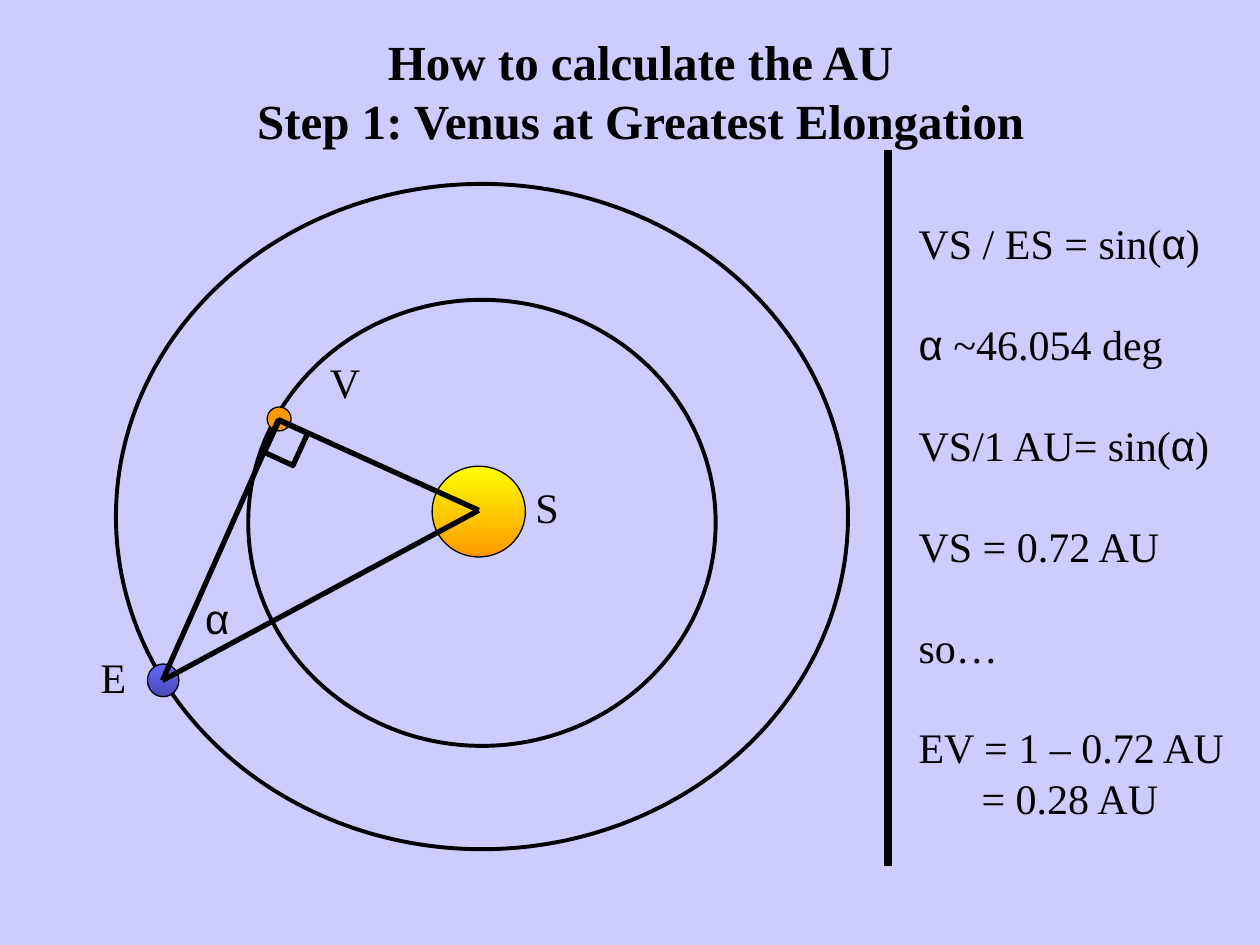
from dataclasses import dataclass
from itertools import groupby

from pptx import Presentation
from pptx import util as u
from pptx.dml.color import RGBColor
from pptx.enum import shapes, text
from pptx.oxml import ns, xmlchemy

BLACK = "000000"
SERIF, SANS = "Times New Roman", "Arial"
LINE_PITCH = 1.2
BODY_SIZE = 24


@dataclass
class Disc:
    left: float
    top: float
    width: float
    height: float
    colors: tuple[str, ...] = ()
    outline: float = 0.75


@dataclass
class Label:
    words: str
    left: float
    top: float
    width: float = 0.42


@dataclass
class Segment:
    start: tuple[float, float]
    end: tuple[float, float]
    weight: float = 3


@dataclass
class Equation:
    words: str
    gap: float = BODY_SIZE * LINE_PITCH
    indent: float = 0


ORBITS = [
    Disc(0.92, 1.46, 5.81, 5.28, outline=2.25),
    Disc(1.97, 2.38, 3.71, 3.54, outline=2.25),
]
BODIES = [
    Disc(1.17, 5.27, 0.25, 0.26, ("6666FF", "4949B6")),
    Disc(3.43, 3.7, 0.74, 0.72, ("FFFF00", "FF9900")),
    Disc(2.12, 3.23, 0.19, 0.19, ("FF9900",)),
]
LABELS = [
    Label("S", 4.15, 3.77),
    Label("V", 2.52, 2.78),
    Label("E", 0.7, 5.12),
    Label("α", 1.53, 4.65),
]
SUN, VENUS, EARTH = (3.8, 4.05), (2.21, 3.33), (1.29, 5.4)
SEGMENTS = [
    Segment(SUN, VENUS),
    Segment(VENUS, EARTH),
    Segment(EARTH, SUN),
    Segment((7.05, 1.19), (7.05, 6.87), 4.5),
]
TITLE = ["How to calculate the AU", "Step 1: Venus at Greatest Elongation"]
EQUATIONS = [
    Equation("VS / ES = sin(α)", gap=0),
    Equation("α ~46.054 deg"),
    Equation("VS/1 AU= sin(α)"),
    Equation("VS = 0.72 AU"),
    Equation("so…"),
    Equation("EV = 1 – 0.72 AU"),
    Equation("= 0.28 AU", gap=0, indent=0.5),
]


def rgb(value: str) -> RGBColor:
    return RGBColor.from_string(value)


def place(shape, left: float, top: float, width: float, height: float) -> None:
    shape.left, shape.top = u.Inches(left), u.Inches(top)
    shape.width, shape.height = u.Inches(width), u.Inches(height)


def set_frame(frame, wrap: bool) -> None:
    frame.word_wrap = wrap
    frame.auto_size = text.MSO_AUTO_SIZE.NONE
    frame.vertical_anchor = text.MSO_ANCHOR.TOP


def write_paragraph(paragraph, words: str, size: float = BODY_SIZE, bold: bool = False) -> None:
    """Write the words in the serif font, with each alpha in the sans one."""
    font = paragraph.font
    font.name, font.size, font.bold = SERIF, u.Pt(size), bold
    font.color.rgb = rgb(BLACK)
    paragraph.line_spacing = u.Pt(size * LINE_PITCH)
    paragraph.space_before = u.Pt(0)
    for is_alpha, letters in groupby(words, lambda letter: letter == "α"):
        run = paragraph.add_run()
        run.text = "".join(letters)
        if is_alpha:
            run.font.name = SANS


def add_paragraphs(frame, count: int) -> list:
    return [frame.paragraphs[0]] + [frame.add_paragraph() for _ in range(count - 1)]


def remove_bullet(paragraph, indent: float) -> None:
    properties = paragraph._p.get_or_add_pPr()
    properties.set("marL", str(u.Inches(indent)))
    properties.set("indent", "0")
    bullet = xmlchemy.OxmlElement("a:buNone")
    properties.insert_element_before(bullet, "a:tabLst", "a:defRPr", "a:extLst")


def set_outline(shape, weight: float) -> None:
    shape.shadow.inherit = False
    shape.line.color.rgb = rgb(BLACK)
    shape.line.width = u.Pt(weight)


def draw_disc(slide, disc: Disc) -> None:
    shape = slide.shapes.add_shape(shapes.MSO_SHAPE.OVAL, 0, 0, 0, 0)
    place(shape, disc.left, disc.top, disc.width, disc.height)
    set_outline(shape, disc.outline)
    if len(disc.colors) == 2:
        shape.fill.gradient()
        shape.fill.gradient_angle = 270
        for stop, color in zip(shape.fill.gradient_stops, disc.colors):
            stop.color.rgb = rgb(color)
    elif disc.colors:
        shape.fill.solid()
        shape.fill.fore_color.rgb = rgb(disc.colors[0])
    else:
        shape.fill.background()


def draw_segment(slide, segment: Segment) -> None:
    ends = [u.Inches(value) for value in segment.start + segment.end]
    line = slide.shapes.add_connector(shapes.MSO_CONNECTOR.STRAIGHT, *ends)
    line.line.color.rgb = rgb(BLACK)
    line.line.width = u.Pt(segment.weight)
    line._element.find(ns.qn("p:spPr")).append(xmlchemy.OxmlElement("a:effectLst"))


def draw_right_angle(slide) -> None:
    square = slide.shapes.add_shape(shapes.MSO_SHAPE.RECTANGLE, 0, 0, 0, 0)
    place(square, 2.13, 3.39, 0.28, 0.25)
    square.rotation = 294.7
    square.fill.background()
    set_outline(square, 3)


def draw_label(slide, label: Label) -> None:
    box = slide.shapes.add_textbox(0, 0, 0, 0)
    place(box, label.left, label.top, label.width, 0.5)
    set_frame(box.text_frame, wrap=False)
    write_paragraph(box.text_frame.paragraphs[0], label.words)


def fill_title(title) -> None:
    place(title, 1.91, 0.2, 6.35, 1.03)
    set_frame(title.text_frame, wrap=False)
    for paragraph, words in zip(add_paragraphs(title.text_frame, len(TITLE)), TITLE):
        write_paragraph(paragraph, words, size=28, bold=True)
        paragraph.alignment = text.PP_ALIGN.CENTER


def fill_equations(body) -> None:
    place(body, 7.19, 1.68, 2.81, 4.89)
    set_frame(body.text_frame, wrap=True)
    paragraphs = add_paragraphs(body.text_frame, len(EQUATIONS))
    for paragraph, equation in zip(paragraphs, EQUATIONS):
        write_paragraph(paragraph, equation.words)
        paragraph.space_before = u.Pt(equation.gap)
        remove_bullet(paragraph, equation.indent)


def main() -> None:
    presentation = Presentation()
    presentation.slide_width, presentation.slide_height = u.Inches(10), u.Inches(7.5)
    slide = presentation.slides.add_slide(presentation.slide_layouts[1])
    slide.background.fill.solid()
    slide.background.fill.fore_color.rgb = rgb("CCCCFF")
    fill_title(slide.shapes.title)
    fill_equations(slide.placeholders[1])
    for disc in ORBITS + BODIES:
        draw_disc(slide, disc)
    for segment in SEGMENTS:
        draw_segment(slide, segment)
    draw_right_angle(slide)
    for label in LABELS:
        draw_label(slide, label)
    presentation.save("out.pptx")


if __name__ == "__main__":
    main()
